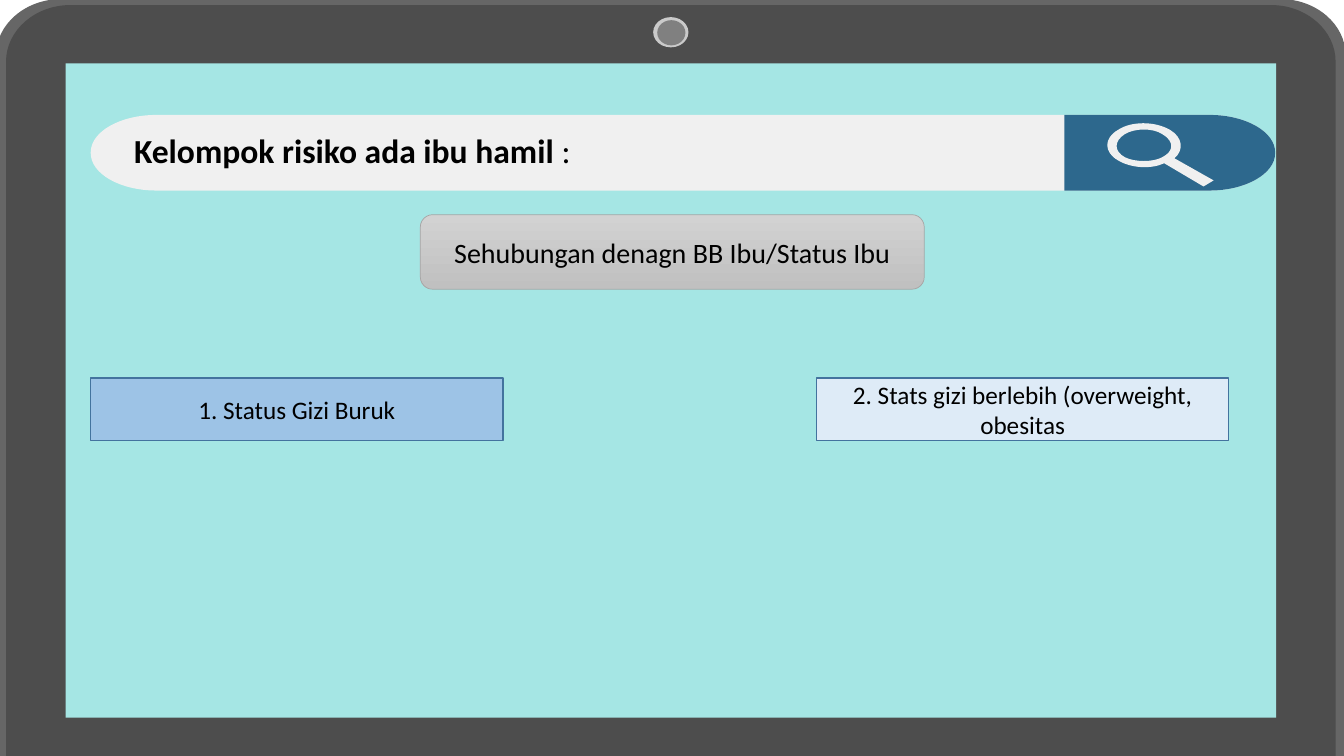
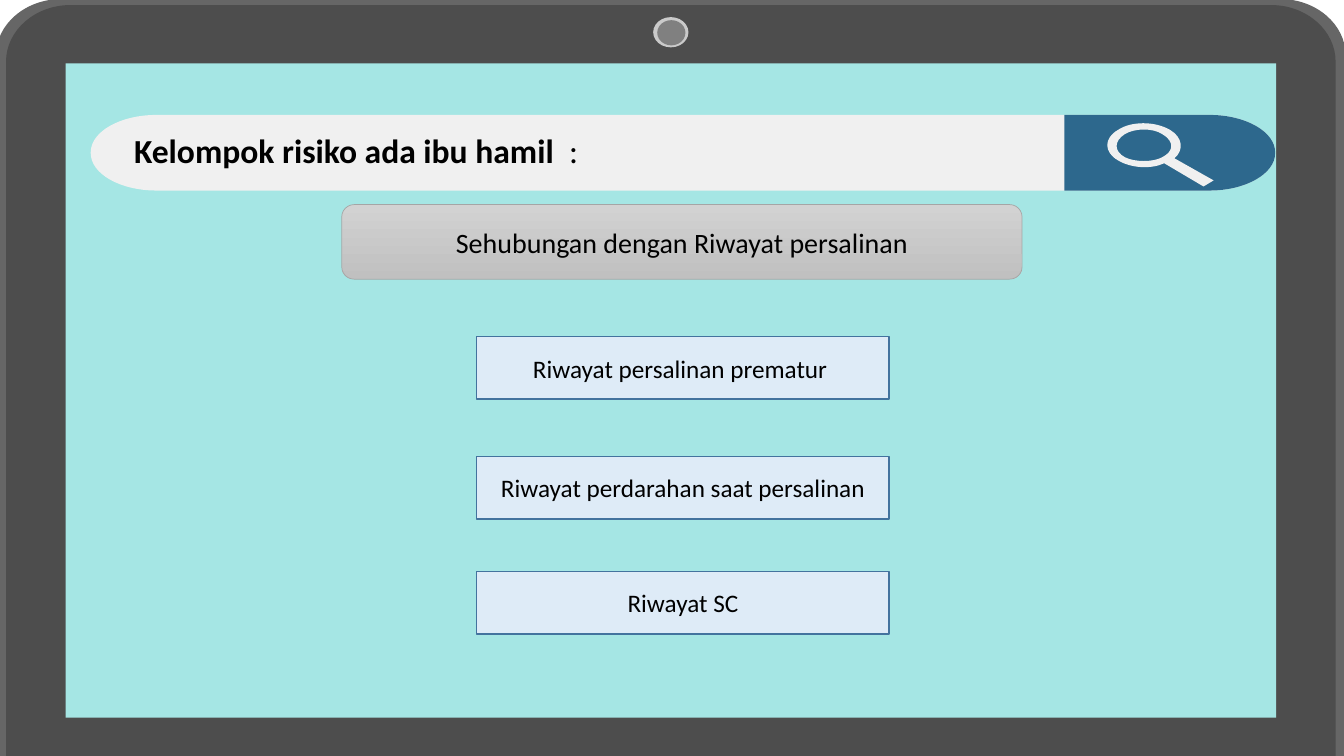
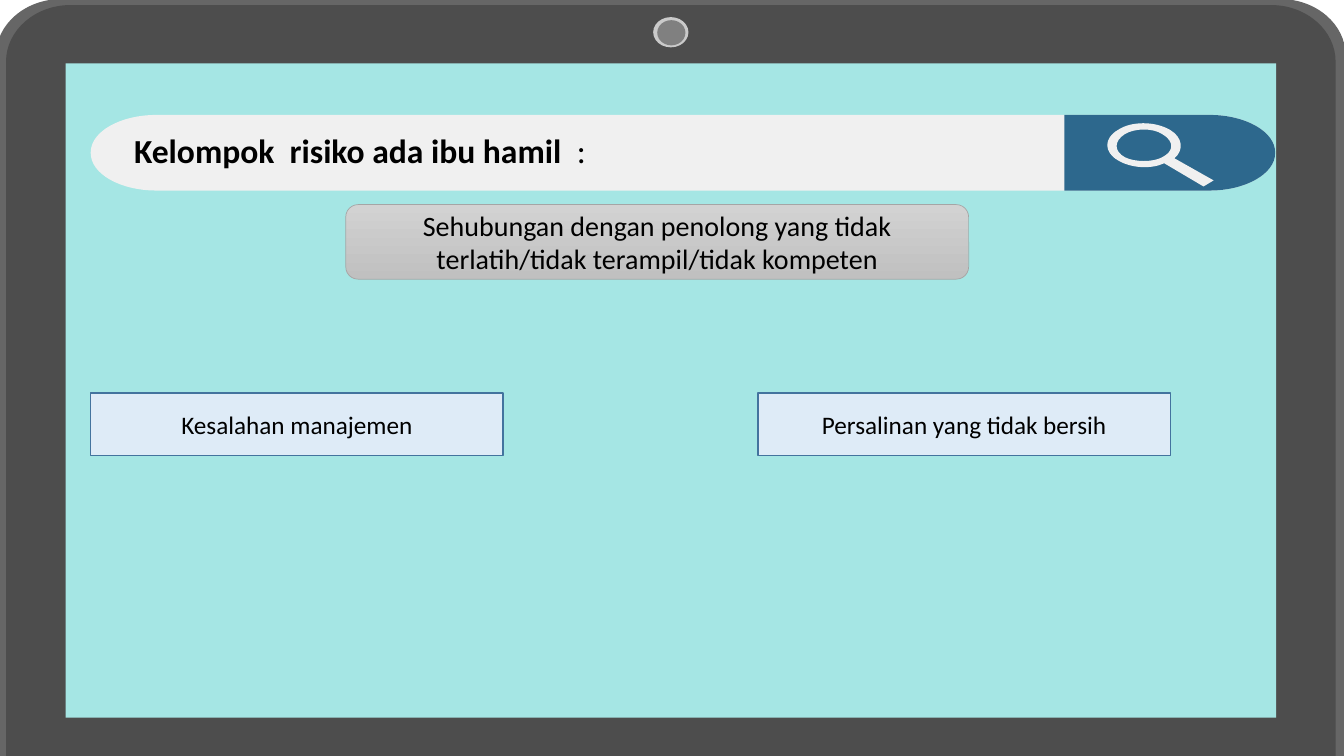
import pptx
import pptx.dml.color
import pptx.enum.shapes
import pptx.enum.text
import pptx.oxml.ns
import pptx.util
from pptx.util import Inches

SHAPE = pptx.enum.shapes.MSO_SHAPE
ALIGN = pptx.enum.text.PP_ALIGN
MIDDLE = pptx.enum.text.MSO_ANCHOR.MIDDLE

# Shared style
FONT = "Calibri"
BLACK = "000000"
BEZEL = "666666"
CASE = "4D4D4D"
SCREEN = "A5E6E4"
LENS_RIM = "CACACA"
LENS = "808080"
BAR = "F0F0F0"
SEARCH = "2D688D"
PALE_BLUE = "DEEBF7"
MID_BLUE = "9DC3E6"
BOX_LINE = "43739E"
TOPIC_LINE = "A5A5A5"
TOPIC_TOP = "D2D2D2"
TOPIC_BOTTOM = "C0C0C0"
BOX_WIDTH, BOX_HEIGHT = 4.09, 0.62
TOPIC_HEIGHT = 0.74

# Magnifier: each contour is a start point and its segments;
# a segment is one point (line) or three points (curve)
MAGNIFIER = [
    ((11.61, 1.29), [
        [(11.46, 1.2), (11.22, 1.2), (11.09, 1.29)],
        [(10.95, 1.37), (10.95, 1.51), (11.09, 1.59)],
        [(11.22, 1.67), (11.42, 1.68), (11.55, 1.62)],
        [(11.94, 1.85)], [(12.04, 1.79)], [(11.65, 1.57)],
        [(11.75, 1.49), (11.73, 1.36), (11.61, 1.29)]]),
    ((11.53, 1.56), [
        [(11.44, 1.61), (11.26, 1.61), (11.16, 1.56)],
        [(11.05, 1.5), (11.05, 1.4), (11.16, 1.33)],
        [(11.26, 1.27), (11.44, 1.27), (11.53, 1.33)],
        [(11.65, 1.4), (11.65, 1.5), (11.53, 1.56)]]),
]


def color(code):
    return pptx.dml.color.RGBColor.from_string(code)


def add_span(para, text, size=18, bold=False):
    span = para.add_run()
    span.text = text
    span.font.name = FONT
    span.font.size = pptx.util.Pt(size)
    span.font.bold = bold
    span.font.color.rgb = color(BLACK)


def paint(shape, fill, line=None, width=1):
    """Fill with one colour, or with a top-to-bottom pair of colours."""
    shape.shadow.inherit = False
    if isinstance(fill, tuple):
        shape.fill.gradient()
        shape.fill.gradient_angle = 270
        for stop, code in zip(shape.fill.gradient_stops, fill):
            stop.color.rgb = color(code)
    else:
        shape.fill.solid()
        shape.fill.fore_color.rgb = color(fill)
    if line:
        shape.line.color.rgb = color(line)
        shape.line.width = pptx.util.Pt(width)
    else:
        shape.line.fill.background()
    return shape


def add_preset(page, kind, left, top, width, height, fill, line=None, line_width=1):
    shape = page.shapes.add_shape(
        kind, Inches(left), Inches(top), Inches(width), Inches(height))
    return paint(shape, fill, line, line_width)


def add_outline(page, contours, fill):
    """Draw contours of lines and curves as one freeform."""
    builder = None
    for (x, y), segments in contours:
        if builder is None:
            builder = page.shapes.build_freeform(Inches(x), Inches(y))
        else:
            builder.move_to(Inches(x), Inches(y))
        points = [(Inches(x), Inches(y)) for segment in segments for x, y in segment]
        builder.add_line_segments(points, close=True)
    shape = builder.convert_to_shape()

    # Join the three points of each curve into one Bezier element
    lines = iter(list(shape.element.iter(pptx.oxml.ns.qn("a:lnTo"))))
    for start, segments in contours:
        for segment in segments:
            first, *others = [next(lines) for point in segment]
            if others:
                first.tag = pptx.oxml.ns.qn("a:cubicBezTo")
            for other in others:
                first.append(other[0])
                other.getparent().remove(other)
    return paint(shape, fill)


def rounded_contour(left, top, right, bottom, radius_x, radius_y, square_left=False):
    """Rectangle with elliptic corners, clockwise from the top edge."""
    pull_x, pull_y = 0.45 * radius_x, 0.45 * radius_y
    segments = [
        [(right - radius_x, top)],
        [(right - pull_x, top), (right, top + pull_y), (right, top + radius_y)],
        [(right, bottom - radius_y)],
        [(right, bottom - pull_y), (right - pull_x, bottom),
         (right - radius_x, bottom)],
    ]
    if square_left:
        return (left, top), segments + [[(left, bottom)]]
    segments += [
        [(left + radius_x, bottom)],
        [(left + pull_x, bottom), (left, bottom - pull_y), (left, bottom - radius_y)],
        [(left, top + radius_y)],
        [(left, top + pull_y), (left + pull_x, top), (left + radius_x, top)],
    ]
    return (left + radius_x, top), segments


def draw_backdrop(page):
    case = rounded_contour(-0.04, -0.01, 13.35, 8.6, 0.65, 0.56)
    inner_case = rounded_contour(0.06, 0.05, 13.25, 8.53, 0.64, 0.56)
    bar = rounded_contour(0.9, 1.14, 12.65, 1.89, 0.65, 0.37)
    button = rounded_contour(10.56, 1.14, 12.65, 1.89, 0.65, 0.37, square_left=True)
    return [
        # Laptop
        add_outline(page, [case], BEZEL),
        add_outline(page, [inner_case], CASE),
        add_preset(page, SHAPE.RECTANGLE, 0.65, 0.63, 12.01, 6.49, SCREEN),
        add_preset(page, SHAPE.OVAL, 6.48, 0.17, 0.35, 0.3, LENS_RIM),
        add_preset(page, SHAPE.OVAL, 6.52, 0.2, 0.28, 0.25, LENS),
        # Search bar
        add_outline(page, [bar], BAR),
        add_outline(page, [button], SEARCH),
        add_outline(page, MAGNIFIER, BAR),
    ]


def prepare_layout(layout, page):
    """Keep only the title on the layout and move the backdrop behind it."""
    for holder in list(layout.placeholders):
        if holder.placeholder_format.idx:
            holder.element.getparent().remove(holder.element)
        else:
            holder.left, holder.top = Inches(1.23), Inches(1.24)
            holder.width, holder.height = Inches(4.8), Inches(0.5)
            title = holder
    for shape in draw_backdrop(page):
        title.element.addprevious(shape.element)


def set_title(page, text):
    frame = page.shapes.title.text_frame
    frame.word_wrap = True
    frame.auto_size = pptx.enum.text.MSO_AUTO_SIZE.NONE
    frame.vertical_anchor = MIDDLE
    para = frame.paragraphs[0]
    para.alignment = ALIGN.LEFT
    add_span(para, text, size=24, bold=True)
    add_span(para, ":", size=24)


def add_label(shape, text, size):
    frame = shape.text_frame
    frame.word_wrap = True
    frame.vertical_anchor = MIDDLE
    para = frame.paragraphs[0]
    para.alignment = ALIGN.CENTER
    add_span(para, text, size=size)


def add_topic(page, text, left, top, width):
    shape = add_preset(page, SHAPE.ROUNDED_RECTANGLE, left, top, width, TOPIC_HEIGHT,
                       (TOPIC_TOP, TOPIC_BOTTOM), TOPIC_LINE, 0.5)
    add_label(shape, text, 20)


def add_box(page, text, left, top, fill=PALE_BLUE):
    shape = add_preset(page, SHAPE.RECTANGLE, left, top, BOX_WIDTH, BOX_HEIGHT,
                       fill, BOX_LINE)
    add_label(shape, text, 18)


def main():
    deck = pptx.Presentation()
    deck.slide_width, deck.slide_height = Inches(40 / 3), Inches(7.5)
    layout = deck.slide_layouts.get_by_name("Title Only")

    # Nutritional status
    page = deck.slides.add_slide(layout)
    prepare_layout(layout, page)
    set_title(page, "Kelompok risiko ada ibu hamil ")
    add_topic(page, "Sehubungan denagn BB Ibu/Status Ibu", 4.17, 2.13, 5)
    add_box(page, "1. Status Gizi Buruk", 0.9, 3.75, fill=MID_BLUE)
    add_box(page, "2. Stats gizi berlebih (overweight, obesitas", 8.1, 3.75)

    # Birth history
    page = deck.slides.add_slide(layout)
    set_title(page, "Kelompok risiko ada ibu hamil  ")
    add_topic(page, "Sehubungan dengan Riwayat persalinan", 3.39, 2.03, 6.75)
    for text, top in [("Riwayat persalinan prematur ", 3.34),
                      ("Riwayat perdarahan saat persalinan", 4.53),
                      ("Riwayat SC", 5.67)]:
        add_box(page, text, 4.73, top)

    # Birth attendants
    page = deck.slides.add_slide(layout)
    set_title(page, "Kelompok  risiko ada ibu hamil  ")
    add_topic(page, "Sehubungan dengan penolong yang tidak terlatih/tidak terampil/"
                    "tidak kompeten", 3.43, 2.03, 6.18)
    add_box(page, "Persalinan yang tidak bersih", 7.52, 3.9)
    add_box(page, "Kesalahan manajemen", 0.9, 3.9)

    deck.save("out.pptx")


if __name__ == "__main__":
    main()
